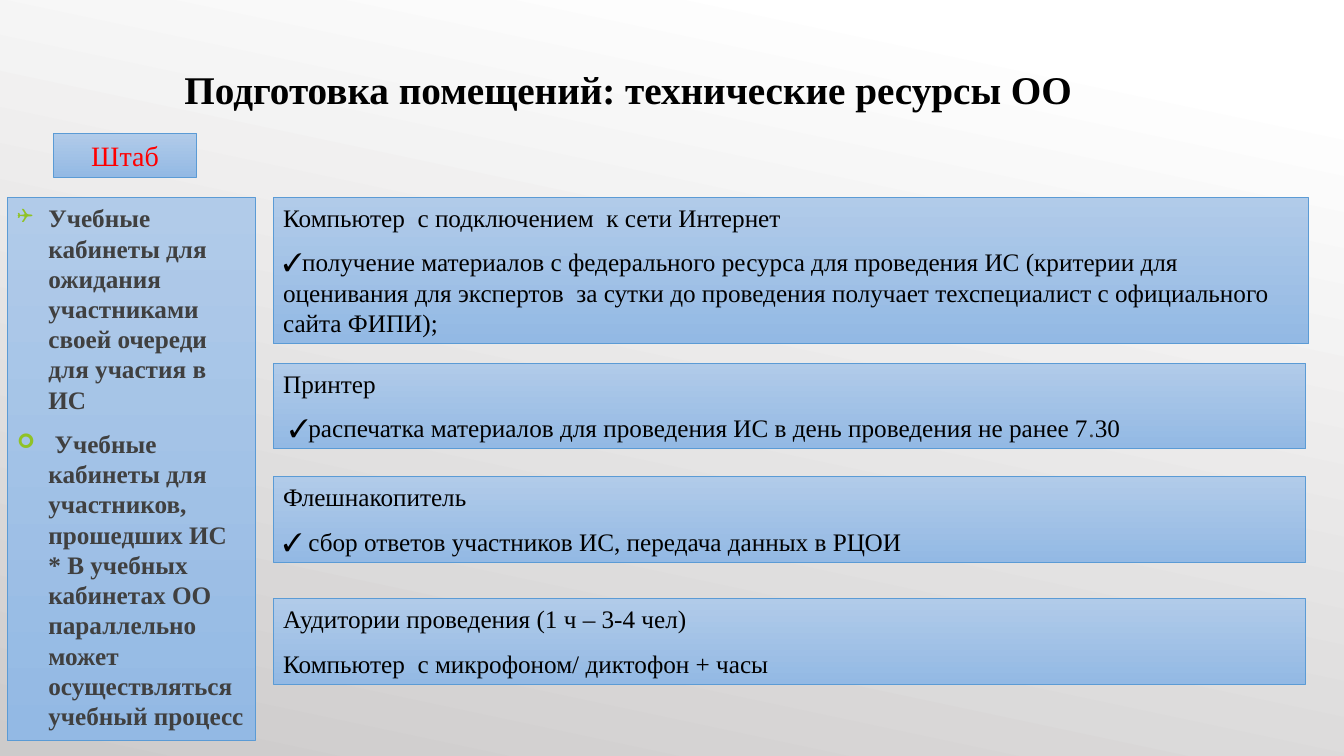
from lxml import etree
from pptx import Presentation
from pptx.dml.color import RGBColor
from pptx.enum.shapes import MSO_SHAPE as SHAPE
from pptx.enum.text import MSO_ANCHOR as ANCHOR, MSO_AUTO_SIZE as AUTO, PP_ALIGN as ALIGN
from pptx.oxml.ns import qn
from pptx.util import Inches, Pt

COLORS = {
    "bg_light": "FFFFFF", "bg_dark": "CDCBCB",
    "panel_top": "B1CBE9", "panel_bottom": "93B9E4", "border": "5B9BD5",
    "text": "000000", "muted": "404040", "accent": "FF0000", "bullet": "90C226",
}
FONT = "Times New Roman"
PANEL_LEFT = 2.71
RESOURCES = [  # top, width, height, paragraphs of (text, colour) runs
    (1.96, 10.27, 1.45, [
        [("Компьютер  с подключением  к сети Интернет", "text")],
        [("✓получение материалов с федерального ресурса для проведения ИС "
          "(критерии для оценивания для экспертов  за сутки до проведения "
          "получает техспециалист с официального сайта ФИПИ);", "text")]]),
    (3.6, 10.24, 0.85, [
        [("Принтер", "text")],
        [(" ✓распечатка материалов для проведения ИС в день проведения не ранее 7", "text"),
         (".", "muted"), ("30", "text")]]),
    (4.73, 10.24, 0.85, [
        [("Флешнакопитель", "text")],
        [("✓ сбор ответов участников ИС, передача данных в РЦОИ", "text")]]),
    (5.94, 10.24, 0.85, [
        [("Аудитории проведения (1 ч – 3-4 чел)", "text")],
        [("Компьютер  с микрофоном/ диктофон + часы", "text")]]),
]
ROOMS = [
    ("❑", "Учебные кабинеты для ожидания участниками своей очереди для участия в ИС"),
    ("➢", " Учебные кабинеты для участников, прошедших ИС * В учебных кабинетах ОО "
          "параллельно может осуществляться учебный процесс"),
]


def rgb(name):
    return RGBColor.from_string(COLORS[name])


def fill_gradient(fill, first, last, angle, start=0):
    """Fill with two colours; angle is counterclockwise, start is a fraction."""
    fill.gradient()
    fill.gradient_angle = angle
    stops = fill.gradient_stops
    stops[0].color.rgb, stops[1].color.rgb = rgb(first), rgb(last)
    stops[0].position = start


def write(sp, paragraphs, size=18, bold=False, align=ALIGN.LEFT, before=10, anchor=ANCHOR.TOP):
    tf = sp.text_frame
    tf.word_wrap = True
    tf.auto_size = AUTO.NONE
    tf.vertical_anchor = anchor
    for i, runs in enumerate(paragraphs):
        p = tf.add_paragraph() if i else tf.paragraphs[0]
        p.alignment = align
        p.space_before = Pt(before)
        for text, color in runs:
            r = p.add_run()
            r.text = text
            r.font.name, r.font.size, r.font.bold = FONT, Pt(size), bold
            r.font.color.rgb = rgb(color)


def place(sp, left, top, width, height):
    sp.left, sp.top = Inches(left), Inches(top)
    sp.width, sp.height = Inches(width), Inches(height)


def style_panel(sp):
    fill_gradient(sp.fill, "panel_top", "panel_bottom", 270)
    sp.line.color.rgb = rgb("border")
    sp.line.width = Pt(0.5)


def add_panel(slide, box, paragraphs, **text_format):
    sp = slide.shapes.add_shape(SHAPE.RECTANGLE, *map(Inches, box))
    sp.shadow.inherit = False
    style_panel(sp)
    write(sp, paragraphs, **text_format)


def set_bullet(p, char):
    pPr = p._p.get_or_add_pPr()
    pPr.set("marL", str(Inches(0.31)))
    pPr.set("indent", str(Inches(-0.31)))
    color = etree.SubElement(pPr, qn("a:buClr"))
    etree.SubElement(color, qn("a:srgbClr"), val=COLORS["bullet"])
    etree.SubElement(pPr, qn("a:buSzPct"), val="80000")
    etree.SubElement(pPr, qn("a:buFont"), typeface="Wingdings")
    etree.SubElement(pPr, qn("a:buChar"), char=char)


def fill_title(sp, box):
    place(sp, *box)
    write(sp, [[("Подготовка помещений: технические ресурсы ОО", "text")]],
          size=28, bold=True, align=ALIGN.CENTER, before=0)


def fill_rooms(sp, box):
    place(sp, *box)
    style_panel(sp)
    write(sp, [[(text, "muted")] for _, text in ROOMS], bold=True)
    for p, (char, _) in zip(sp.text_frame.paragraphs, ROOMS):
        set_bullet(p, char)


def add_resources(slide, left):
    for top, width, height, paragraphs in RESOURCES:
        add_panel(slide, (left, top, width, height), paragraphs)


def main():
    prs = Presentation()
    prs.slide_width, prs.slide_height = Inches(13.33), Inches(7.5)
    slide = prs.slides.add_slide(prs.slide_layouts[1])
    fill_gradient(slide.background.fill, "bg_light", "bg_dark", 258, start=0.1)
    fill_title(slide.shapes.title, (0.27, 0.6, 11.92, 0.57))
    add_panel(slide, (0.53, 1.32, 1.42, 0.44), [[("Штаб", "accent")]],
              size=20, align=ALIGN.CENTER)
    fill_rooms(slide.placeholders[1], (0.07, 1.96, 2.46, 5.39))
    add_resources(slide, PANEL_LEFT)
    prs.save("out.pptx")


if __name__ == "__main__":
    main()
